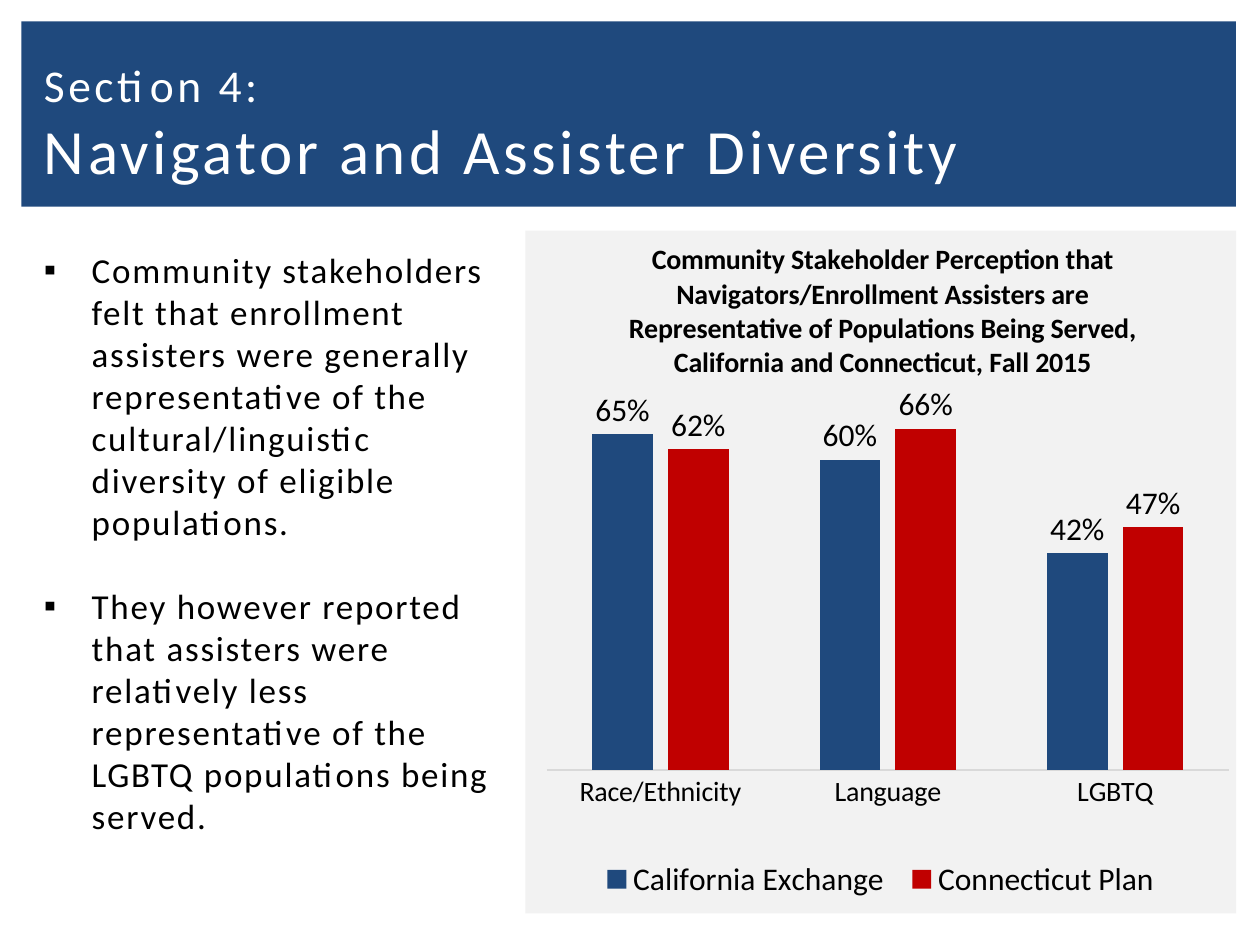
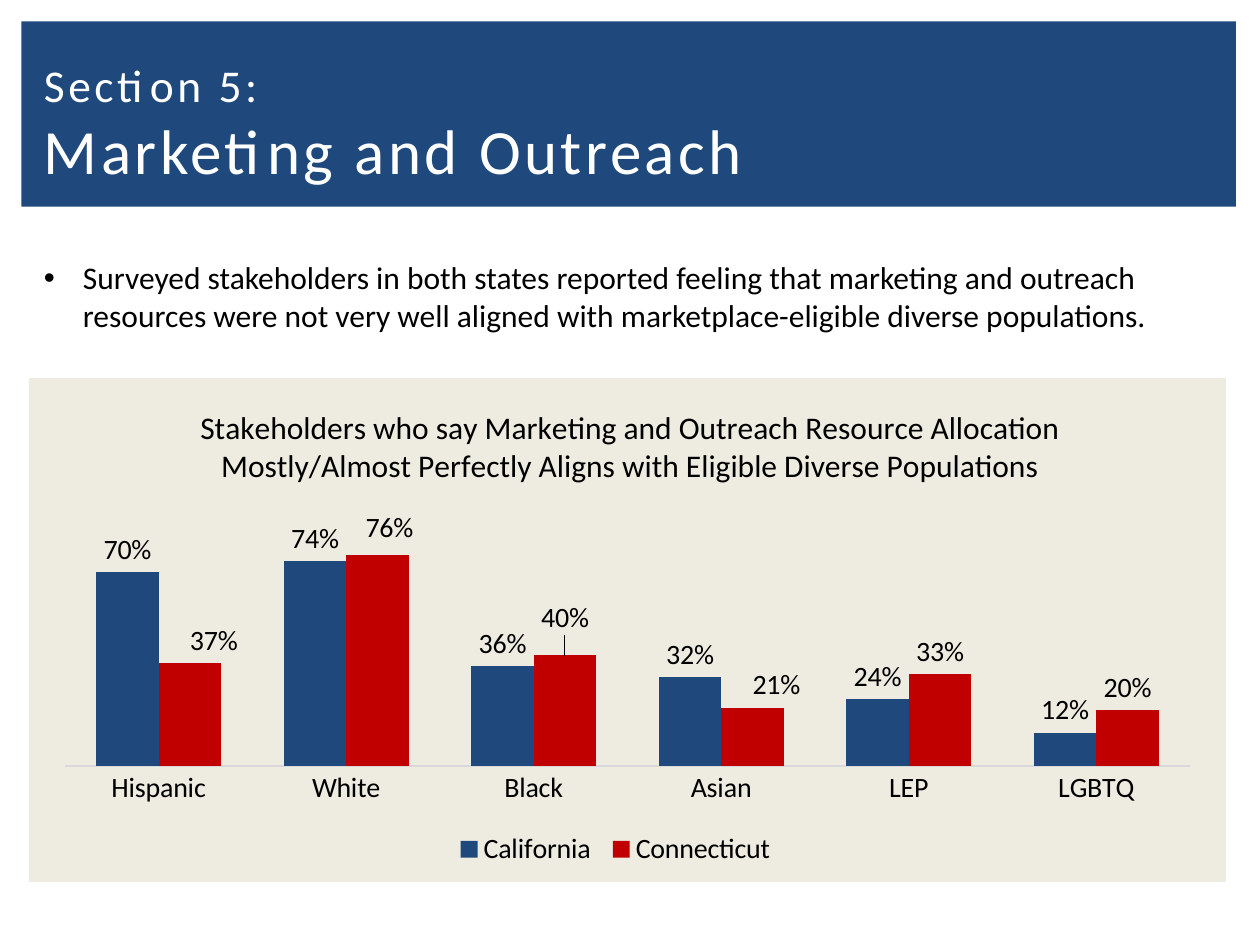
import pptx
import pptx.chart.data
import pptx.dml.color
import pptx.enum.chart
import pptx.enum.shapes
import pptx.enum.text
import pptx.oxml
import pptx.oxml.ns
import pptx.util

Inches, Pt = pptx.util.Inches, pptx.util.Pt
XL = pptx.enum.chart
NAVY, RED, BLACK, WHITE, AXIS_GREY = "1F497D", "C00000", "000000", "FFFFFF", "D9D9D9"
FONT = "Calibri"
CHART_NS = pptx.oxml.ns.nsdecls("c", "a")


def style(font, size, color=BLACK, bold=False):
    font.name, font.size, font.bold = FONT, Pt(size), bold
    font.color.rgb = pptx.dml.color.RGBColor.from_string(color)


def place(parent, index, **values):
    """Give a chart part a manual layout as fractions of the chart."""
    for old in parent.xpath("c:layout"):
        parent.remove(old)
    inner = "".join(f'<c:{k} val="{v}"/>' for k, v in values.items())
    parent.insert(index, pptx.oxml.parse_xml(
        f"<c:layout {CHART_NS}><c:manualLayout>{inner}</c:manualLayout></c:layout>"))


EDGE = dict(xMode="edge", yMode="edge")

slides = [
    dict(
        section="Section 4:", title="Navigator and Assister Diversity",
        bullets=["Community stakeholders felt that enrollment assisters were generally "
                 "representative of the cultural/linguistic diversity of eligible populations.",
                 "They however reported that assisters were relatively less "
                 "representative of the LGBTQ populations being served."],
        text_box=(0.25, 1.92, 3.83, 5.17), text_size=20, spacing=100,
        bullet="▪", indent=0.38,
        chart_box=(4.17, 1.83, 5.64, 5.42), fill="F2F2F2",
        chart_title=["Community Stakeholder Perception that",
                     "Navigators/Enrollment Assisters are",
                     "Representative of Populations Being Served,",
                     "California and Connecticut, Fall 2015"],
        title_size=16, title_bold=True, title_at=dict(x=0.14, y=0.01),
        cats=["Race/Ethnicity", "Language", "LGBTQ"],
        series={"California Exchange": [0.65, 0.6, 0.42],
                "Connecticut Plan": [0.62, 0.66, 0.47]},
        label_size=18, gap=150, overlap=-25, top=0.7,
        plot_at=dict(x=0.03, y=0.26, w=0.96, h=0.53),
        legend_at=dict(x=0.09, y=0.91, w=0.82, h=0.08), label_shifts={}),
    dict(
        section="Section 5:", title="Marketing and Outreach",
        bullets=["Surveyed stakeholders in both states reported feeling that marketing and "
                 "outreach resources were not very well aligned with marketplace-eligible "
                 "diverse populations."],
        text_box=(0.25, 2, 9.48, 0.71), text_size=18, spacing=0,
        bullet="•", indent=0.31,
        chart_box=(0.23, 3, 9.5, 4), fill="EEECE1",
        chart_title=["Stakeholders who say Marketing and Outreach Resource Allocation",
                     "Mostly/Almost Perfectly Aligns with Eligible Diverse Populations"],
        title_size=18, title_bold=False, title_at=dict(x=0.14, y=0.05),
        cats=["Hispanic", "White", "Black", "Asian", "LEP", "LGBTQ"],
        series={"California": [0.7, 0.74, 0.36, 0.32, 0.24, 0.12],
                "Connecticut": [0.37, 0.76, 0.4, 0.21, 0.33, 0.2]},
        label_size=16, gap=100, overlap=0, top=0.8,
        plot_at=dict(x=0.03, y=0.33, w=0.94, h=0.44),
        legend_at=dict(x=0.35, y=0.9, w=0.28, h=0.07),
        label_shifts={0: (0.02, 0), 1: (0.01, -0.01), 2: (0, -0.03), 3: (0.02, 0)}),
]

prs = pptx.Presentation()
prs.slide_width, prs.slide_height = Inches(10), Inches(7.5)

for d in slides:
    s = prs.slides.add_slide(prs.slide_layouts[6])

    # Title band
    band = s.shapes.add_shape(pptx.enum.shapes.MSO_SHAPE.RECTANGLE,
                              Inches(0.17), Inches(0.17), Inches(9.64), Inches(1.47))
    band.shadow.inherit = False
    band.fill.solid()
    band.fill.fore_color.rgb = pptx.dml.color.RGBColor.from_string(NAVY)
    band.line.fill.background()

    tf = s.shapes.add_textbox(Inches(0.25), Inches(0.39), Inches(9.75), Inches(1.15)).text_frame
    tf.word_wrap = True
    tf.vertical_anchor = pptx.enum.text.MSO_ANCHOR.MIDDLE
    p = tf.paragraphs[0]
    for text, size in ((d["section"], 26), (d["title"], 36)):
        if p.runs:
            p.add_line_break()
        r = p.add_run()
        r.text = text
        style(r.font, size, WHITE)
        r.font._element.set("spc", "200")

    # Chart
    data = pptx.chart.data.CategoryChartData(number_format="0%")
    data.categories = d["cats"]
    for name, values in d["series"].items():
        data.add_series(name, values)
    chart = s.shapes.add_chart(XL.XL_CHART_TYPE.COLUMN_CLUSTERED,
                               *map(Inches, d["chart_box"]), data).chart
    style(chart.font, 16)
    root = chart.element
    root.xpath("c:chart")[0].addnext(pptx.oxml.parse_xml(
        f'<c:spPr {CHART_NS}><a:solidFill><a:srgbClr val="{d["fill"]}"/></a:solidFill>'
        "<a:ln><a:noFill/></a:ln></c:spPr>"))

    tf = chart.chart_title.text_frame
    for i, line in enumerate(d["chart_title"]):
        p = tf.add_paragraph() if i else tf.paragraphs[0]
        p.alignment = pptx.enum.text.PP_ALIGN.CENTER
        r = p.add_run()
        r.text = line
        style(r.font, d["title_size"], bold=d["title_bold"])
    place(root.xpath("c:chart/c:title")[0], 1, **EDGE, **d["title_at"])

    chart.has_legend = True
    chart.legend.position = XL.XL_LEGEND_POSITION.BOTTOM
    chart.legend.include_in_layout = False
    style(chart.legend.font, d["label_size"])
    place(root.xpath("c:chart/c:legend")[0], 1, **EDGE, **d["legend_at"])
    place(root.xpath("c:chart/c:plotArea")[0], 0, layoutTarget="inner", **EDGE, **d["plot_at"])

    axis = chart.category_axis
    axis.major_tick_mark = XL.XL_TICK_MARK.NONE
    style(axis.tick_labels.font, 16)
    axis.format.line.width = Pt(0.75)
    axis.format.line.color.rgb = pptx.dml.color.RGBColor.from_string(AXIS_GREY)
    axis = chart.value_axis
    axis.minimum_scale, axis.maximum_scale = 0, d["top"]
    axis.has_major_gridlines = False
    axis.visible = False

    plot = chart.plots[0]
    plot.vary_by_categories = False
    plot.gap_width, plot.overlap = d["gap"], d["overlap"]
    for ser, color in zip(plot.series, (NAVY, RED)):
        ser.format.fill.solid()
        ser.format.fill.fore_color.rgb = pptx.dml.color.RGBColor.from_string(color)
        labels = ser.data_labels
        labels.show_value = True
        labels.number_format, labels.number_format_is_linked = "0%", False
        labels.position = XL.XL_LABEL_POSITION.OUTSIDE_END
        style(labels.font, d["label_size"])
    for i, (dx, dy) in d["label_shifts"].items():
        label = plot.series[1].points[i].data_label
        style(label.font, d["label_size"])
        label.position = XL.XL_LABEL_POSITION.OUTSIDE_END
        place(root.xpath(f".//c:dLbl[c:idx/@val='{i}']")[0], 1, x=dx, y=dy)

    # Bullets
    tf = s.shapes.add_textbox(*map(Inches, d["text_box"])).text_frame
    tf.word_wrap = True
    for i, text in enumerate(d["bullets"]):
        p = tf.add_paragraph() if i else tf.paragraphs[0]
        if i:
            p.space_before = Pt(24)
        r = p.add_run()
        r.text = text
        style(r.font, d["text_size"])
        r.font._element.set("spc", str(d["spacing"]))
        pPr = p._p.get_or_add_pPr()
        pPr.set("marL", str(Inches(d["indent"])))
        pPr.set("indent", str(-Inches(d["indent"])))
        for tag in ('buFont typeface="Arial"', f'buChar char="{d["bullet"]}"'):
            pPr.append(pptx.oxml.parse_xml(f"<a:{tag} {pptx.oxml.ns.nsdecls('a')}/>"))

prs.save("out.pptx")
